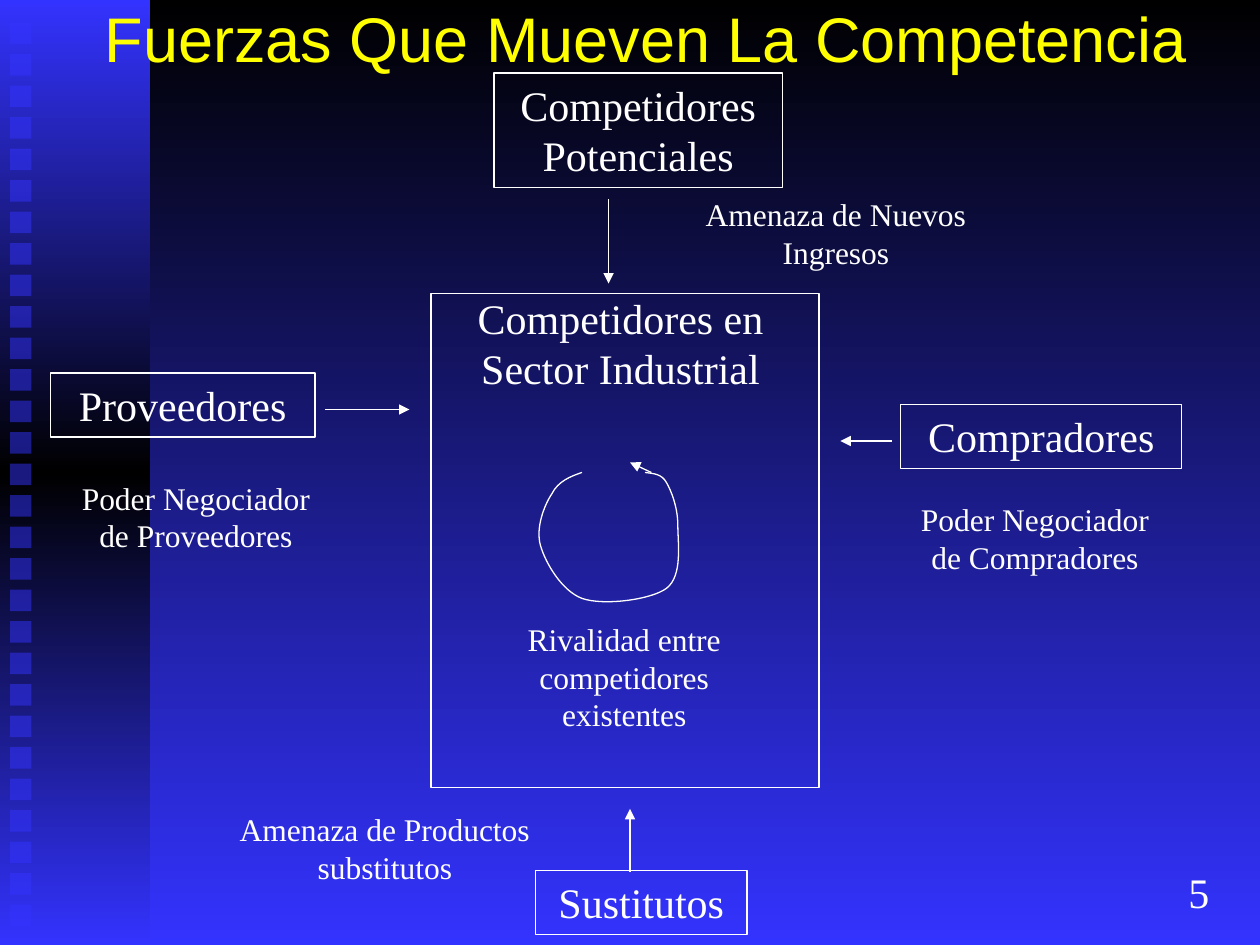
from copy import deepcopy
from dataclasses import dataclass

from lxml.etree import SubElement
from pptx import Presentation
from pptx.dml.color import RGBColor
from pptx.enum.shapes import MSO_CONNECTOR, MSO_SHAPE
from pptx.enum.text import MSO_ANCHOR, MSO_AUTO_SIZE, PP_ALIGN
from pptx.oxml.ns import qn
from pptx.util import Inches, Pt


@dataclass(frozen=True)
class Theme:
    """Colours, fonts and type sizes of the slide."""
    black: RGBColor = RGBColor(0x00, 0x00, 0x00)
    blue: RGBColor = RGBColor(0x33, 0x33, 0xFF)
    yellow: RGBColor = RGBColor(0xFF, 0xFF, 0x00)
    white: RGBColor = RGBColor(0xFF, 0xFF, 0xFF)
    title_font: str = "Arial"
    body_font: str = "Times New Roman"
    title_size: Pt = Pt(36)
    name_size: Pt = Pt(24)
    note_size: Pt = Pt(18)
    line: Pt = Pt(0.75)


T = Theme()

FORCES = [
    ((3.92, 0.58, 2.29, 0.91), "Competidores\nPotenciales",
     (0.91, 1.0, 0.91, 1.67), "Amenaza de Nuevos Ingresos", (1.58, 0.92, 2.27, 0.7)),
    ((4.25, 6.91, 1.68, 0.51), "Sustitutos",
     (0.75, 0.01, 0.75, -0.49), "Amenaza de Productos substitutos", (-2.83, -0.53, 3.27, 0.7)),
    ((7.15, 3.21, 2.23, 0.51), "Compradores",
     (-0.07, 0.29, -0.48, 0.29), "Poder Negociador de Compradores", (-0.07, 0.71, 2.27, 0.7)),
    ((0.4, 2.96, 2.1, 0.51), "Proveedores",
     (2.18, 0.29, 2.85, 0.29), "Poder Negociador de Proveedores", (0.02, 0.79, 2.27, 0.7)),
]

LOOP = [
    (0.37, 0),
    (0.28, 0.03), (0.18, 0.07), (0.13, 0.17),
    (0.07, 0.26), (0, 0.44), (0.04, 0.58),
    (0.08, 0.72), (0.21, 0.94), (0.37, 1),
    (0.54, 1.06), (0.92, 1.01), (1.04, 0.92),
    (1.17, 0.82), (1.13, 0.56), (1.13, 0.42),
    (1.13, 0.28), (1.08, 0.15), (1.04, 0.08),
    (1, 0.01), (0.94, 0.01), (0.87, 0),
]


def emu(box):
    """Convert a tuple of inches to lengths."""
    return [Inches(v) for v in box]


def color_stops(fill, colors):
    """Spread colours evenly over a top-to-bottom gradient."""
    fill.gradient_angle = 270
    for i, (stop, color) in enumerate(zip(fill.gradient_stops, colors)):
        stop.position = i / (len(colors) - 1)
        stop.color.rgb = color


def set_text(tf, text, size, color=T.white, font=T.body_font, wrap=True, anchor=MSO_ANCHOR.TOP):
    """Write centred text and format its runs."""
    tf.text = text
    tf.auto_size = MSO_AUTO_SIZE.NONE
    tf.word_wrap = wrap
    tf.vertical_anchor = anchor
    for p in tf.paragraphs:
        p.alignment = PP_ALIGN.CENTER
        for r in p.runs:
            r.font.size, r.font.name = size, font
            r.font.color.rgb = color


def add_text(s, box, text, size, wrap=True):
    """Add a text box."""
    tb = s.shapes.add_textbox(*emu(box))
    set_text(tb.text_frame, text, size, wrap=wrap)


def outline(sp):
    """Give a shape a thin white line and no fill."""
    sp.shadow.inherit = False
    sp.fill.background()
    sp.line.color.rgb = T.white
    sp.line.width = T.line


def add_frame(s, box):
    """Add an outlined rectangle."""
    sp = s.shapes.add_shape(MSO_SHAPE.RECTANGLE, *emu(box))
    outline(sp)
    return sp


def add_arrow(s, x, y, ends):
    """Add an arrow whose ends are relative to a point."""
    x1, y1, x2, y2 = ends
    cn = s.shapes.add_connector(MSO_CONNECTOR.STRAIGHT, *emu((x + x1, y + y1, x + x2, y + y2)))
    cn.line.color.rgb = T.white
    cn.line.width = T.line
    sp_pr = cn._element.spPr
    SubElement(sp_pr.find(qn("a:ln")), qn("a:tailEnd"), type="triangle")
    SubElement(sp_pr, qn("a:effectLst"))


def add_sidebar(s, box):
    """Draw the gradient band and its column of translucent squares."""
    x, y, w, h = box
    group = s.shapes.add_group_shape()
    band = group.shapes.add_shape(MSO_SHAPE.RECTANGLE, *emu(box))
    band.shadow.inherit = False
    band.line.fill.background()
    band.fill.gradient()
    stops = band._element.spPr.find(".//" + qn("a:gsLst"))
    stops.append(deepcopy(stops[0]))
    color_stops(band.fill, (T.blue, T.black, T.blue))
    for i in range(29):
        sq = group.shapes.add_shape(
            MSO_SHAPE.RECTANGLE, *emu((x + 0.08, y + 0.18 + 0.25 * i, 0.17, 0.17)))
        sq.shadow.inherit = False
        sq.line.fill.background()
        sq.fill.solid()
        sq.fill.fore_color.rgb = T.blue
        rgb = sq._element.spPr.find(".//" + qn("a:srgbClr"))
        SubElement(rgb, qn("a:alpha"), val="50000")


def add_title(s, box, text):
    """Place the title in front of the sidebar."""
    title = s.shapes.title
    title.left, title.top, title.width, title.height = emu(box)
    set_text(title.text_frame, text, T.title_size, T.yellow, T.title_font,
             anchor=MSO_ANCHOR.MIDDLE)
    s.shapes._spTree.append(title._element)


def add_force(s, box, name, arrow, note, note_box):
    """Draw a framed force with its arrow and note."""
    x, y = box[:2]
    nx, ny, nw, nh = note_box
    set_text(add_frame(s, box).text_frame, name, T.name_size, wrap=False)
    add_arrow(s, x, y, arrow)
    add_text(s, (x + nx, y + ny, nw, nh), note, T.note_size)


def add_loop(s, x, y):
    """Draw the curved rivalry loop with its arrowhead."""
    points = [tuple(emu((x + px, y + py))) for px, py in LOOP]
    builder = s.shapes.build_freeform(*points[0])
    builder.add_line_segments(points[1:], close=False)
    sp = builder.convert_to_shape()
    outline(sp)
    curve = sp._element.spPr.find(".//" + qn("a:path"))
    lines = curve.findall(qn("a:lnTo"))
    for i in range(0, len(lines), 3):
        bezier = SubElement(curve, qn("a:cubicBezTo"))
        for line in lines[i:i + 3]:
            bezier.append(line[0])
            curve.remove(line)
    add_arrow(s, x, y, (0.92, 0, 0.75, -0.08))


def add_sector(s, box):
    """Draw the central industry box with its heading, loop and note."""
    x, y = box[:2]
    add_frame(s, box)
    add_text(s, (x + 0.08, y - 0.06, 2.85, 0.9), "Competidores en Sector Industrial", T.name_size)
    add_loop(s, x + 0.83, y + 1.42)
    add_text(s, (x + 0.4, y + 2.54, 2.27, 1), "Rivalidad entre competidores existentes",
             T.note_size)


def main():
    """Build and save the slide."""
    prs = Presentation()
    prs.slide_width, prs.slide_height = Inches(10), Inches(7.5)
    s = prs.slides.add_slide(prs.slide_layouts[5])
    fill = s.background.fill
    fill.gradient()
    color_stops(fill, (T.black, T.blue))
    add_sidebar(s, (0, 0, 1.19, 7.5))
    add_title(s, (0.5, -0.33, 9.25, 1.25), "Fuerzas Que Mueven La Competencia")
    add_text(s, (9.32, 6.83, 0.39, 0.5), "5", T.name_size, wrap=False)
    for force in FORCES:
        add_force(s, *force)
    add_sector(s, (3.42, 2.33, 3.08, 3.92))
    prs.save("out.pptx")


if __name__ == "__main__":
    main()
